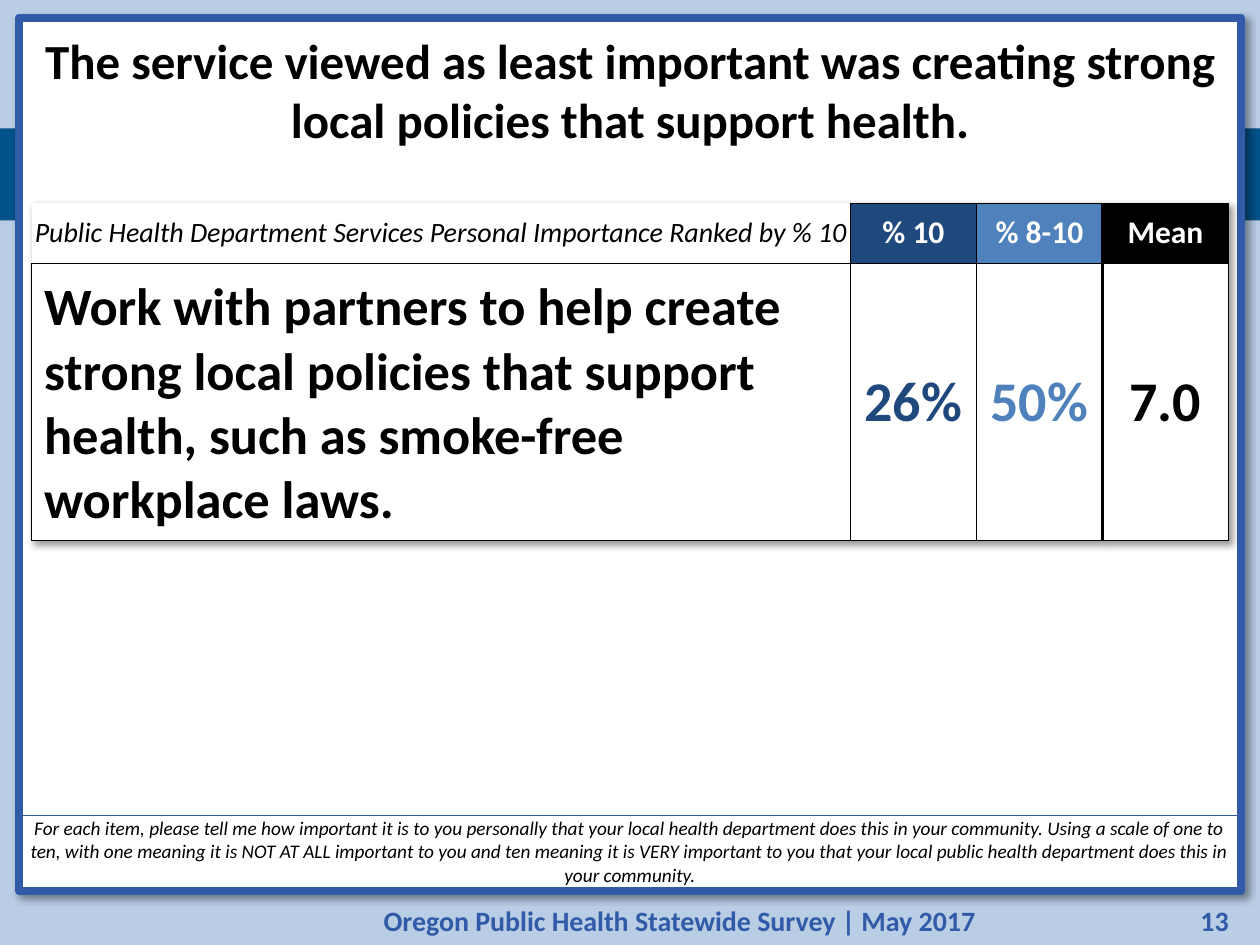
from dataclasses import dataclass

from lxml.etree import SubElement
from pptx import Presentation
from pptx.dml.color import RGBColor
from pptx.enum.shapes import MSO_SHAPE as Shape
from pptx.enum.text import MSO_ANCHOR as Anchor, MSO_AUTO_SIZE as Fit, PP_ALIGN as Align
from pptx.oxml import parse_xml
from pptx.oxml.ns import nsdecls, qn
from pptx.util import Inches, Pt


@dataclass(frozen=True)
class Theme:
    font: str = "Calibri"
    back: str = "B9CDE5"
    band: str = "02528A"
    edge: str = "315BA8"
    navy: str = "1F497D"
    blue: str = "4F81BD"
    ink: str = "000000"
    paper: str = "FFFFFF"
    title: int = 28
    foot: int = 16
    note: int = 11
    label: int = 16
    head: int = 18
    item: int = 30
    value: int = 32


T = Theme()
THIN, THICK = 0.25, 2.25


def rgb(code):
    return RGBColor.from_string(code)


def write(frame, text, size, color, align=Align.CENTER, bold=False, italic=False):
    para = frame.paragraphs[0]
    para.alignment = align
    run = para.add_run()
    run.text = text
    font = run.font
    font.name, font.size, font.bold, font.italic = T.font, Pt(size), bold, italic
    font.color.rgb = rgb(color)


def inset(item, left, top, right, bottom):
    item.margin_left, item.margin_top = Inches(left), Inches(top)
    item.margin_right, item.margin_bottom = Inches(right), Inches(bottom)


def shade(parent, place, blur, dist, alpha):
    """Put an outer shadow at the given place among the parent's children."""
    parent.insert(place, parse_xml(
        f'<a:effectLst {nsdecls("a")}><a:outerShdw blurRad="{Pt(blur)}" '
        f'dist="{Pt(dist)}" dir="2700000" algn="tl" rotWithShape="0">'
        f'<a:srgbClr val="{T.ink}"><a:alpha val="{alpha * 1000}"/></a:srgbClr>'
        '</a:outerShdw></a:effectLst>'))


def add_rect(slide, box, fill=None, line=None, width=0.75):
    rect = slide.shapes.add_shape(Shape.RECTANGLE, *map(Inches, box))
    rect.shadow.inherit = False
    if fill:
        rect.fill.solid()
        rect.fill.fore_color.rgb = rgb(fill)
    else:
        rect.fill.background()
    if line:
        rect.line.color.rgb = rgb(line)
        rect.line.width = Pt(width)
    else:
        rect.line.fill.background()
    return rect


def add_panel(slide, box):
    panel = add_rect(slide, box, T.paper, T.edge, 4.5)
    props = panel._element.spPr
    props.remove(props.find(qn("a:effectLst")))
    shade(props, len(props), 4, 3, 40)


def add_foot(slide, box, page_w):
    left, top, width, height = box
    parts = [
        (left, width - page_w, "Oregon Public Health Statewide Survey | May 2017", Align.CENTER),
        (left + width - page_w, page_w, "13", Align.RIGHT),
    ]
    for x, w, text, align in parts:
        area = slide.shapes.add_textbox(*map(Inches, (x, top, w, height)))
        frame = area.text_frame
        frame.word_wrap = True
        frame.vertical_anchor = Anchor.MIDDLE
        write(frame, text, T.foot, T.edge, align, bold=True)


def add_note(slide, box):
    frame = add_rect(slide, box, line=T.edge).text_frame
    frame.word_wrap = True
    frame.vertical_anchor = Anchor.BOTTOM
    inset(frame, 0.07, 0, 0.07, 0.05)
    write(frame, "For each item, please tell me how important it is to you personally that "
          "your local health department does this in your community. Using a scale of one "
          "to ten, with one meaning it is NOT AT ALL important to you and ten meaning it is "
          "VERY important to you that your local public health department does this in your "
          "community.", T.note, T.ink, italic=True)


def set_title(slide, box):
    title = slide.shapes.title
    title.left, title.top, title.width, title.height = map(Inches, box)
    slide.shapes._spTree.append(title._element)  # bring to front
    frame = title.text_frame
    frame.word_wrap = True
    frame.auto_size = Fit.NONE
    frame.vertical_anchor = Anchor.MIDDLE
    inset(frame, 0.04, 0.05, 0.04, 0.05)
    write(frame, "The service viewed as least important was creating strong local policies "
          "that support health.", T.title, T.ink, bold=True)


def set_cell(cell, fill, edges):
    """Edges maps L, R, T and B to a line width, 0 for none."""
    props = cell._tc.get_or_add_tcPr()
    for side in "LRTB":
        line = SubElement(props, qn(f"a:ln{side}"), w=str(Pt(edges[side])))
        if edges[side]:
            paint = SubElement(line, qn("a:solidFill"))
            SubElement(paint, qn("a:srgbClr"), val=T.ink)
        else:
            SubElement(line, qn("a:noFill"))
    cell.fill.solid()
    cell.fill.fore_color.rgb = rgb(fill)
    cell.vertical_anchor = Anchor.MIDDLE


def add_scores(slide, box, widths, head_h):
    left, top, width, height = box
    table = slide.shapes.add_table(2, len(widths), *map(Inches, box)).table
    table.first_row = table.horz_banding = False
    shade(table._tbl.tblPr, 0, 4, 3, 40)
    for col, wide in zip(table.columns, widths):
        col.width = Inches(wide)
    for row, high in zip(table.rows, (head_h, height - head_h)):
        row.height = Inches(high)

    scores = [("% 10", "26%", T.navy), ("% 8-10", "50%", T.blue), ("Mean", "7.0", T.ink)]
    mean = len(scores)
    for col, (head, value, color) in enumerate(scores, 1):
        edges = dict.fromkeys("LRTB", THIN)
        if col == mean:
            edges["L"] = THICK
        elif col == mean - 1:
            edges["R"] = THICK
        top_cell, low_cell = table.cell(0, col), table.cell(1, col)
        set_cell(top_cell, color, edges)
        write(top_cell.text_frame, head, T.head, T.paper, bold=True)
        set_cell(low_cell, T.paper, edges)
        write(low_cell.text_frame, value, T.value, color, bold=True)

    label, item = table.cell(0, 0), table.cell(1, 0)
    set_cell(label, T.paper, dict(L=0, R=THIN, T=0, B=THIN))
    inset(label, 0, 0.05, 0, 0.05)
    write(label.text_frame, "Public Health Department Services Personal Importance "
          "Ranked by % 10", T.label, T.ink, italic=True)
    set_cell(item, T.paper, dict.fromkeys("LRTB", THIN))
    inset(item, 0.1, 0.1, 0.1, 0.1)
    write(item.text_frame, "Work with partners to help create strong local policies that "
          "support health, such as smoke-free workplace laws.", T.item, T.ink,
          Align.LEFT, bold=True)


def main():
    deck = Presentation()
    deck.slide_width, deck.slide_height = Inches(10), Inches(7.5)
    slide = deck.slides.add_slide(deck.slide_layouts[5])
    slide.background.fill.solid()
    slide.background.fill.fore_color.rgb = rgb(T.back)
    add_rect(slide, (0, 1.02, 10, 0.73), T.band)
    add_foot(slide, (1.62, 7.12, 8.23, 0.37), 0.68)
    add_panel(slide, (0.15, 0.14, 9.7, 6.93))
    add_note(slide, (0.15, 6.47, 9.7, 0.61))
    add_scores(slide, (0.25, 1.61, 9.5, 2.68), (6.5, 1, 1, 1), 0.48)
    set_title(slide, (0.15, 0.14, 9.7, 1.14))
    deck.save("out.pptx")


if __name__ == "__main__":
    main()
